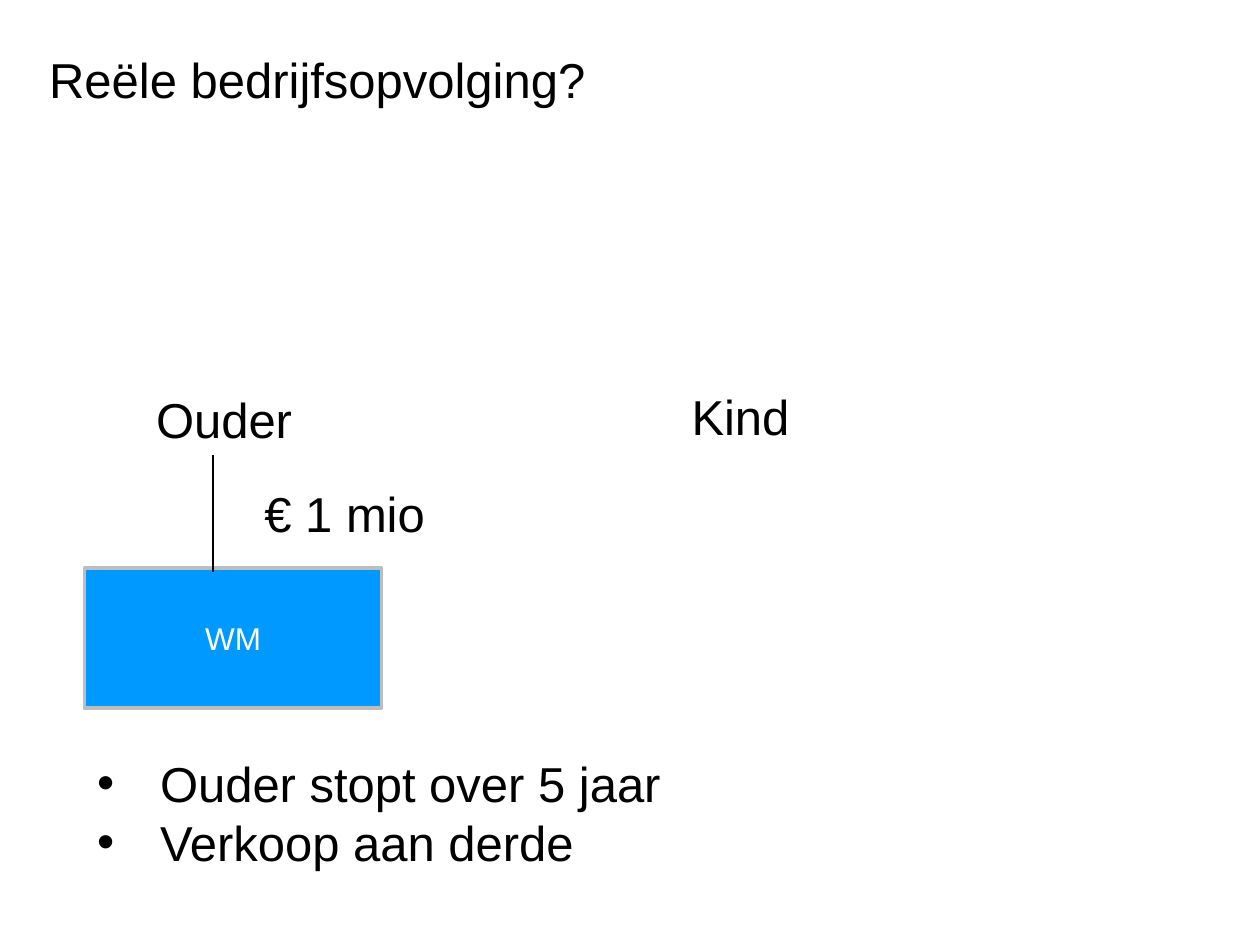
import dataclasses

import pptx
import pptx.dml.color
import pptx.enum.shapes
import pptx.enum.text
import pptx.oxml
import pptx.oxml.ns
import pptx.util
from pptx.util import Inches

Align = pptx.enum.text.PP_ALIGN
Anchor = pptx.enum.text.MSO_ANCHOR
Fit = pptx.enum.text.MSO_AUTO_SIZE
BLACK = "000000"


@dataclasses.dataclass
class Label:
    text: str
    left: float
    top: float
    width: float


LABELS = [
    Label("Ouder", 1.14, 3.04, 1.65),
    Label("Kind", 5.39, 3.02, 2.2),
    Label("€ 1 mio", 2, 3.79, 1.65),
]
POINTS = ["Ouder stopt over 5 jaar", "Verkoop aan derde"]


def color(code: str) -> pptx.dml.color.RGBColor:
    return pptx.dml.color.RGBColor.from_string(code)


def element(tag: str, **attrs: str):
    node = pptx.oxml.parse_xml(f"<a:{tag} {pptx.oxml.ns.nsdecls('a')}/>")
    for name, value in attrs.items():
        node.set(name, value)
    return node


def place(shape, left: float, top: float, width: float, height: float) -> None:
    shape.left, shape.top = Inches(left), Inches(top)
    shape.width, shape.height = Inches(width), Inches(height)


def style(frame, size: float = 28, code: str = BLACK, align=Align.LEFT) -> None:
    for para in frame.paragraphs:
        para.alignment = align
        for run in para.runs:
            run.font.name = "Arial"
            run.font.size = pptx.util.Pt(size)
            run.font.color.rgb = color(code)


def add_title(slide) -> None:
    title = slide.shapes.title
    place(title, 0.39, 0.39, 9.21, 1.57)
    frame = title.text_frame
    frame.text = "Reële bedrijfsopvolging?"
    frame.auto_size = Fit.NONE
    frame.vertical_anchor = Anchor.TOP
    frame.margin_left = frame.margin_right = 0
    frame.margin_top = frame.margin_bottom = 0
    style(frame)


def add_list(slide) -> None:
    body = slide.placeholders[1]
    place(body, 0.67, 5.93, 6.54, 1.06)
    frame = body.text_frame
    frame.text = "\n".join(POINTS)
    frame.auto_size = Fit.NONE
    frame.vertical_anchor = Anchor.TOP
    for para in frame.paragraphs:
        para.space_before = pptx.util.Pt(0)
        props = para._p.get_or_add_pPr()
        props.set("marL", str(Inches(0.5)))
        props.set("indent", str(Inches(-0.5)))
        props.append(element("buFont", typeface="Arial"))
        props.append(element("buChar", char="•"))
    style(frame)


def add_label(slide, label: Label) -> None:
    box = slide.shapes.add_textbox(0, 0, 0, 0)
    place(box, label.left, label.top, label.width, 0.57)
    frame = box.text_frame
    frame.word_wrap = True
    frame.text = label.text
    style(frame)


def add_firm(slide) -> None:
    kind = pptx.enum.shapes.MSO_SHAPE.RECTANGLE
    firm = slide.shapes.add_shape(kind, 0, 0, 0, 0)
    place(firm, 0.67, 4.51, 2.36, 1.11)
    firm.shadow.inherit = False
    firm.fill.solid()
    firm.fill.fore_color.rgb = color("0099FF")
    firm.line.color.rgb = color("BDBDBD")
    firm.line.width = pptx.util.Pt(2)
    firm.text_frame.text = "WM"
    firm.text_frame.vertical_anchor = Anchor.MIDDLE
    style(firm.text_frame, 18, "FFFFFF", Align.CENTER)


def add_link(slide) -> None:
    kind = pptx.enum.shapes.MSO_CONNECTOR.STRAIGHT
    link = slide.shapes.add_connector(
        kind, Inches(1.69), Inches(4.54), Inches(1.69), Inches(3.61)
    )
    link.line.color.rgb = color(BLACK)
    link.line.width = pptx.util.Pt(0.75)
    link._element.spPr.append(element("effectLst"))


def main() -> None:
    deck = pptx.Presentation()
    deck.slide_width, deck.slide_height = Inches(10), Inches(7.5)
    slide = deck.slides.add_slide(deck.slide_layouts[1])
    add_title(slide)
    add_firm(slide)
    add_link(slide)
    for label in LABELS:
        add_label(slide, label)
    add_list(slide)
    deck.save("out.pptx")


if __name__ == "__main__":
    main()
